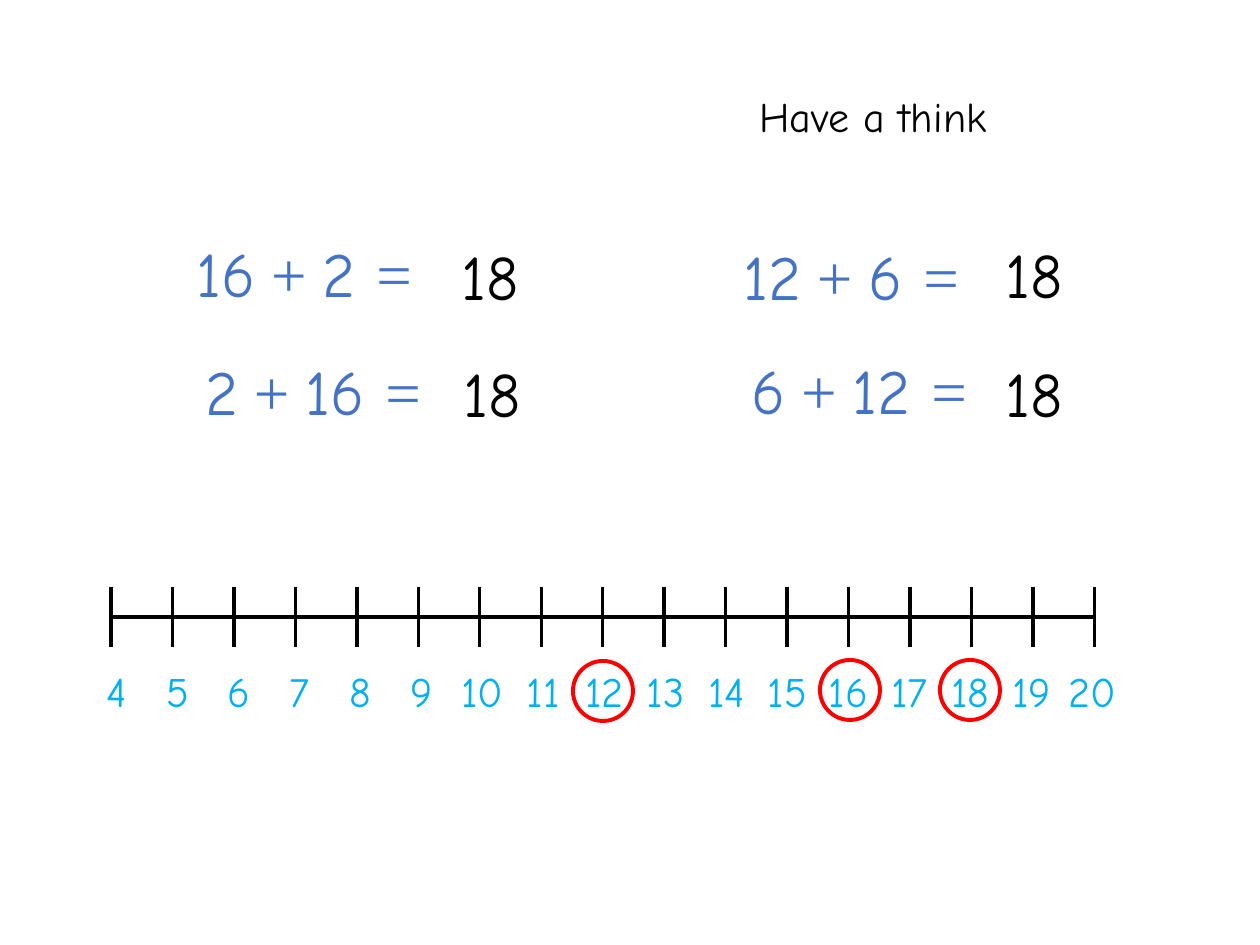
from dataclasses import dataclass
from lxml.etree import SubElement as Sub
from pptx import Presentation
from pptx.dml.color import RGBColor as RGB
from pptx.enum.shapes import MSO_SHAPE as Shape
from pptx.enum.text import MSO_AUTO_SIZE as Fit, PP_ALIGN as Align
from pptx.oxml.ns import qn
from pptx.util import Pt


@dataclass(frozen=True)
class Theme:
    hand: str = "Comic Neue"
    sign: str = "Times New Roman"
    black: str = "000000"
    blue: str = "4472C4"
    sky: str = "00B0F0"
    red: str = "FF0000"
    big: int = 36
    mid: int = 24
    line: float = 2.25


look = Theme()
scale = 914400 / 126


def px(n):
    return round(n * scale)


def write(text, x, y, w, h, size=look.mid, color=look.black, align=Align.CENTER):
    box = slide.shapes.add_textbox(px(x), px(y), px(w), px(h))
    frame = box.text_frame
    frame.word_wrap = True
    frame.auto_size = Fit.SHAPE_TO_FIT_TEXT
    para = frame.paragraphs[0]
    para.alignment = align
    parts = [text] if isinstance(text, str) else text
    for i, part in enumerate(parts):
        run = para.add_run()
        run.text = part
        run.font.name = look.sign if i % 2 else look.hand
        run.font.size = Pt(size)
        run.font.color.rgb = RGB.from_string(color)


deck = Presentation()
deck.slide_width, deck.slide_height = px(1260), px(945)
slide = deck.slides.add_slide(deck.slide_layouts[6])

write("Have a think", 747, 84, 321, 63, align=Align.LEFT)

sums = [
    (16, 2, 156, 228, 430, 231),
    (2, 16, 165, 346, 432, 348),
    (12, 6, 703, 231, 974, 229),
    (6, 12, 711, 345, 974, 348),
]
for a, b, x, y, end, top in sums:
    write([f"{a}", " + ", f"{b} ", "= "], x, y, 312, 89, size=look.big, color=look.blue)
    write(f"{a + b}", end, top, 120, 89, size=look.big)

first, last = 4, 20
steps = last - first
frame = slide.shapes.add_table(2, steps, px(111), px(587), px(984), px(60))
grid = frame.table
grid.first_row = grid.horz_banding = False
for r, row in enumerate(grid.rows):
    row.height = px(30)
    for cell in row.cells:
        cell.margin_left = cell.margin_right = cell.margin_top = cell.margin_bottom = 0
        para = cell.text_frame.paragraphs[0]
        Sub(para._p, qn("a:endParaRPr"), sz="800")
        props = cell._tc.get_or_add_tcPr()
        drawn = "LRT" if r else "LRB"
        for side in "LRTB":
            edge = Sub(props, qn(f"a:ln{side}"), w=str(Pt(look.line)))
            if side in drawn:
                fill = Sub(edge, qn("a:solidFill"))
                Sub(fill, qn("a:srgbClr"), val=look.black)
            else:
                Sub(edge, qn("a:noFill"))
        cell.fill.background()

for n in range(first, last + 1):
    write(f"{n}", 71 + 61 * (n - first), 659, 91, 63, color=look.sky)

for x, y in [(573, 661), (820, 660), (940, 660)]:
    ring = slide.shapes.add_shape(Shape.OVAL, px(x), px(y), px(60), px(60))
    ring.shadow.inherit = False
    ring.fill.background()
    ring.line.color.rgb = RGB.from_string(look.red)
    ring.line.width = Pt(look.line)

deck.save("out.pptx")
